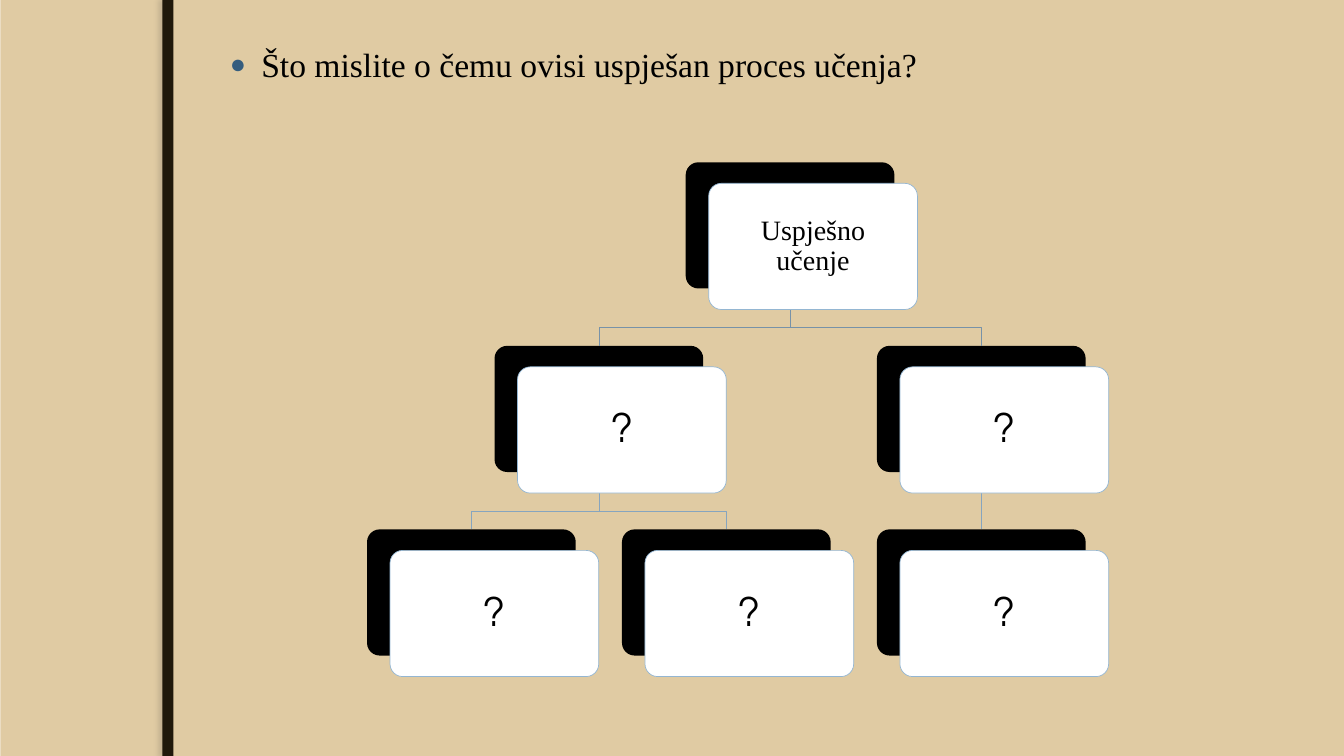
from collections import namedtuple
from dataclasses import dataclass

from lxml.etree import SubElement
from pptx import Presentation
from pptx.dml.color import RGBColor
from pptx.enum.shapes import MSO_CONNECTOR, MSO_SHAPE
from pptx.enum.text import MSO_ANCHOR, PP_ALIGN
from pptx.oxml.ns import qn
from pptx.util import Cm, Pt

Box = namedtuple("Box", "left top width height")


@dataclass(frozen=True)
class Theme:
    """Colours, fonts and type sizes of the slide."""

    edge: str = "EBDDC3"
    sand: str = "E0CBA3"
    bar: str = "20190B"
    bar_shadow: str = "766E60"
    bullet: str = "355D7E"
    ink: str = "000000"
    card: str = "FFFFFF"
    card_line: str = "94B6D2"
    upper_link: str = "7792A8"
    lower_link: str = "86A5BF"
    serif: str = "Times New Roman"
    sans: str = "TeX Gyre Adventor"
    question_size: int = 24
    topic_size: int = 20
    mark_size: int = 28
    hairline: float = 0.5


THEME = Theme()


def add_xml(parent, tag, **attributes):
    """Append a DrawingML element to the parent."""
    return SubElement(parent, qn(tag), {key: str(value) for key, value in attributes.items()})


def write(frame, text, *, font, size, align=PP_ALIGN.LEFT, anchor=MSO_ANCHOR.TOP,
          spacing=1.0, inset=None, bullet=None):
    """Fill a text frame with one formatted paragraph."""
    frame.word_wrap = True
    frame.vertical_anchor = anchor
    if inset is not None:
        frame.margin_left = frame.margin_right = inset
        frame.margin_top = frame.margin_bottom = inset
    paragraph = frame.paragraphs[0]
    paragraph.text = text
    paragraph.alignment = align
    paragraph.line_spacing = spacing
    paragraph.space_before = Pt(0)
    if bullet:
        properties = paragraph._p.get_or_add_pPr()
        properties.set("marL", str(Cm(1.02)))
        properties.set("indent", str(Cm(-0.79)))
        add_xml(add_xml(properties, "a:buClr"), "a:srgbClr", val=THEME.bullet)
        add_xml(properties, "a:buSzPct", val=80000)
        add_xml(properties, "a:buChar", char=bullet)
    paragraph.font.name = font
    paragraph.font.size = Pt(size)
    paragraph.font.color.rgb = RGBColor.from_string(THEME.ink)


def set_line(line, color):
    """Give a line the hairline width and a colour."""
    line.color.rgb = RGBColor.from_string(color)
    line.width = Pt(THEME.hairline)


def add_block(slide, kind, box, fill, outline=None):
    """Add a filled preset shape, with an outline if one is given."""
    block = slide.shapes.add_shape(kind, *box)
    block.shadow.inherit = False
    block.fill.solid()
    block.fill.fore_color.rgb = RGBColor.from_string(fill)
    if outline:
        set_line(block.line, outline)
    else:
        block.line.fill.background()
    if kind == MSO_SHAPE.ROUNDED_RECTANGLE:
        block.adjustments[0] = 0.1
    return block


def add_backdrop(slide, box):
    """Draw the sand panel and the dark vertical bar behind the content."""
    slide.background.fill.solid()
    slide.background.fill.fore_color.rgb = RGBColor.from_string(THEME.edge)
    margin = Cm(0.03)
    panel_box = Box(box.left + margin, box.top, box.width - margin, box.height)
    panel = add_block(slide, MSO_SHAPE.RECTANGLE, panel_box, THEME.sand)
    bar_box = Box(box.left + Cm(4.09), box.top, Cm(0.28), box.height)
    bar = add_block(slide, MSO_SHAPE.RECTANGLE, bar_box, THEME.bar)
    effects = bar._element.spPr.find(qn("a:effectLst"))
    shadow = add_xml(effects, "a:outerShdw", blurRad=Pt(3), dist=Pt(3), dir=10800000)
    add_xml(add_xml(shadow, "a:srgbClr", val=THEME.bar_shadow), "a:alpha", val=25000)
    for depth, part in enumerate((panel, bar), start=2):
        slide.shapes._spTree.insert(depth, part._element)


def add_question(slide, box):
    """Place the bulleted question in the body placeholder."""
    body = slide.placeholders[1]
    body.left, body.top, body.width, body.height = box
    write(body.text_frame, "Što mislite o čemu ovisi uspješan proces učenja?",
          font=THEME.serif, size=THEME.question_size, bullet="●")


def add_link(slide, parent, child, color):
    """Join a parent to its child by a straight or stepped line."""
    start_x = parent.left + parent.width // 2
    end_x = child.left + child.width // 2
    start_y = parent.top + parent.height
    if start_x == end_x:
        link = slide.shapes.add_connector(MSO_CONNECTOR.STRAIGHT, start_x, start_y, end_x, child.top)
        link.begin_connect(parent, 2)
        link.end_connect(child, 0)
        add_xml(link._element.spPr, "a:effectLst")
    else:
        bend_y = start_y + round((child.top - start_y) * 0.68)
        outline = slide.shapes.build_freeform(start_x, start_y)
        outline.add_line_segments(
            [(start_x, bend_y), (end_x, bend_y), (end_x, child.top)], close=False)
        link = outline.convert_to_shape()
        link.shadow.inherit = False
        link.fill.background()
    set_line(link.line, color)


def add_hierarchy(slide, box):
    """Draw the three-level tree of cards inside the box."""
    card_width, card_height = Cm(5.26), Cm(3.18)
    shift_x, shift_y = Cm(0.58), Cm(0.53)
    column_step = (box.width - card_width - shift_x) // 2
    row_step = (box.height - card_height - shift_y) // 2
    places = {"root": (1.25, 0), "left": (0.5, 1), "right": (2, 1),
              "left first": (0, 2), "left second": (1, 2), "right only": (2, 2)}
    links = [("root", "left"), ("root", "right"), ("left", "left first"),
             ("left", "left second"), ("right", "right only")]

    backs = {}
    for node, (column, row) in places.items():
        back_box = Box(box.left + round(column * column_step), box.top + row * row_step,
                       card_width, card_height)
        backs[node] = add_block(slide, MSO_SHAPE.ROUNDED_RECTANGLE, back_box, THEME.ink)
    for parent, child in links:
        color = THEME.upper_link if parent == "root" else THEME.lower_link
        add_link(slide, backs[parent], backs[child], color)
    for node, back in backs.items():
        card_box = Box(back.left + shift_x, back.top + shift_y, card_width, card_height)
        card = add_block(slide, MSO_SHAPE.ROUNDED_RECTANGLE, card_box, THEME.card, THEME.card_line)
        is_root = node == "root"
        write(card.text_frame, "Uspješno učenje" if is_root else "?",
              font=THEME.serif if is_root else THEME.sans,
              size=THEME.topic_size if is_root else THEME.mark_size,
              align=PP_ALIGN.CENTER, anchor=MSO_ANCHOR.MIDDLE, spacing=0.9, inset=Cm(0.38))


def main():
    """Build the slide and save it."""
    presentation = Presentation()
    presentation.slide_width, presentation.slide_height = Cm(33.87), Cm(19.05)
    slide = presentation.slides.add_slide(presentation.slide_layouts[1])
    heading = slide.shapes.title._element
    heading.getparent().remove(heading)
    add_backdrop(slide, Box(0, 0, presentation.slide_width, presentation.slide_height))
    add_question(slide, Box(Cm(5.31), Cm(0.99), Cm(27.76), Cm(16.36)))
    add_hierarchy(slide, Box(Cm(9.25), Cm(4.09), Cm(18.69), Cm(12.96)))
    presentation.save("out.pptx")


if __name__ == "__main__":
    main()
